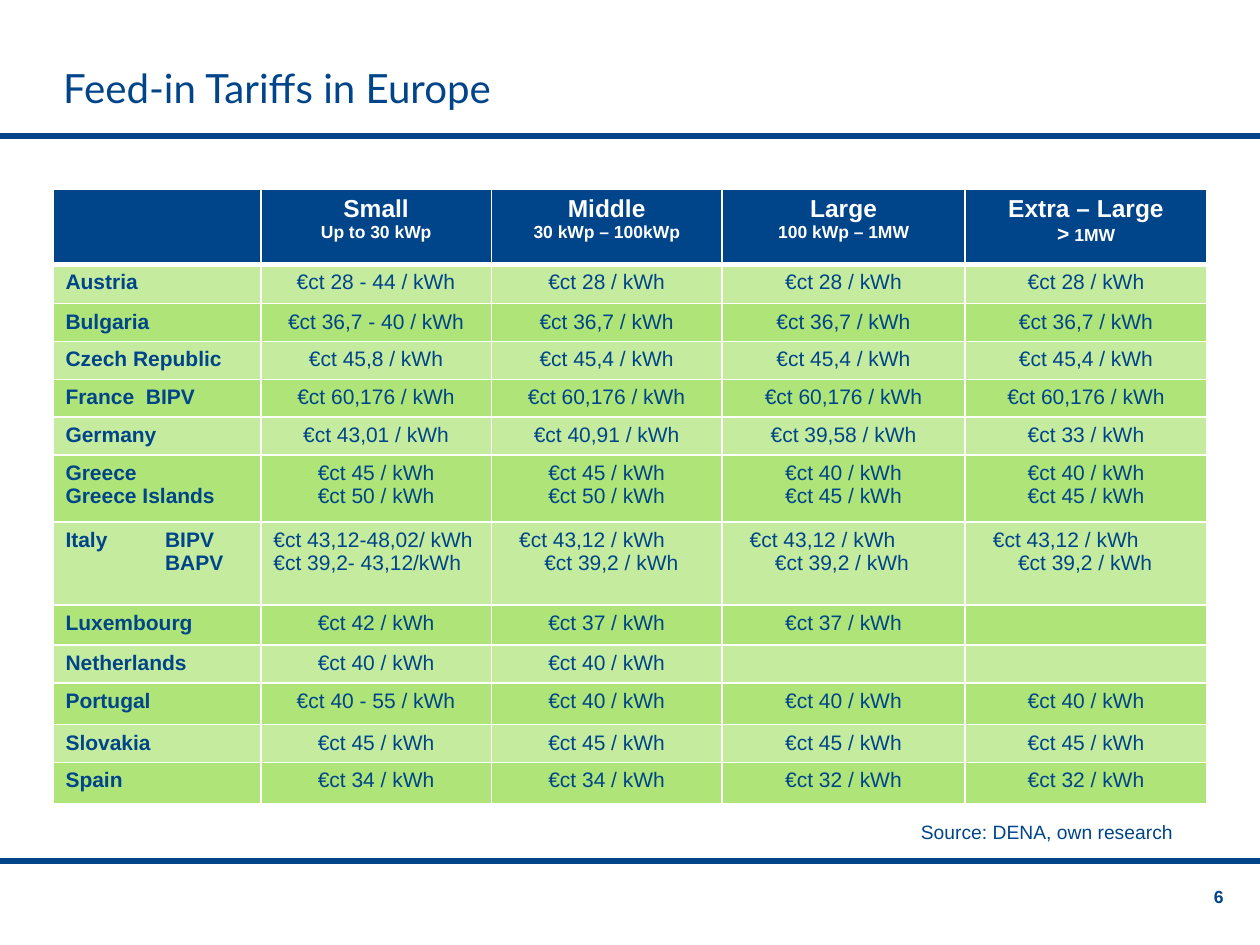
from lxml import etree
from pptx import Presentation
from pptx.dml.color import RGBColor
from pptx.enum.shapes import MSO_CONNECTOR
from pptx.enum.text import MSO_ANCHOR, PP_ALIGN
from pptx.oxml.ns import qn
from pptx.util import Inches, Pt

LEFT, CENTER, RIGHT = PP_ALIGN.LEFT, PP_ALIGN.CENTER, PP_ALIGN.RIGHT
TOP, MIDDLE = MSO_ANCHOR.TOP, MSO_ANCHOR.MIDDLE
STRAIGHT = MSO_CONNECTOR.STRAIGHT
COLORS = {"navy": "004489", "white": "FFFFFF", "light": "C5EC9E", "green": "AEE478"}
TITLE_ONLY = 5

COLUMN_WIDTHS = [1.65, 1.83, 1.83, 1.93, 1.92]
HEADER_HEIGHT = 0.6
SIZE_CLASSES = [
    ("Small", [("Up to 30 kWp", 10)]),
    ("Middle", [("30 kWp – 100kWp", 10)]),
    ("Large", [("100 kWp – 1MW", 10)]),
    ("Extra – Large", [(">", 12), (" 1MW", 10)]),
]
ITALY = "Italy\tBIPV\n\tBAPV"
ITALY_TAB = 0.79
ITALY_INDENTS = [0.12, 0.32]
# Row height, country, then cents per kWh for each size class
TARIFFS = [
    (0.31, "Austria", ["28 - 44", "28", "28", "28"]),
    (0.29, "Bulgaria", ["36,7 - 40", "36,7", "36,7", "36,7"]),
    (0.29, "Czech Republic", ["45,8", "45,4", "45,4", "45,4"]),
    (0.29, "France  BIPV", ["60,176"] * 4),
    (0.29, "Germany", ["43,01", "40,91", "39,58", "33"]),
    (0.53, "Greece\nGreece Islands", ["45\n50", "45\n50", "40\n45", "40\n45"]),
    (0.66, ITALY, ["€ct 43,12-48,02/ kWh\n€ct 39,2- 43,12/kWh"] + ["43,12\n39,2"] * 3),
    (0.32, "Luxembourg", ["42", "37", "37", ""]),
    (0.29, "Netherlands", ["40", "40", "", ""]),
    (0.33, "Portugal", ["40 - 55", "40", "40", "40"]),
    (0.3, "Slovakia", ["45"] * 4),
    (0.33, "Spain", ["34", "34", "32", "32"]),
]


def price_lines(cents):
    """Wrap each bare amount in its unit; complete prices stay as they are."""
    return [line if line.startswith("€") else f"€ct {line} / kWh"
            for line in cents.split("\n") if line]


class TariffSlide:
    def __init__(self, prs):
        self.slide = prs.slides.add_slide(prs.slide_layouts[TITLE_ONLY])
        self.body_font = "Arial"
        self.title_font = "Lato"

    @staticmethod
    def color(name):
        return RGBColor.from_string(COLORS[name])

    def style(self, font, size, color="navy", bold=False, name=None):
        font.name = name or self.body_font
        font.size = Pt(size)
        font.bold = bold
        font.color.rgb = self.color(color)

    def title(self, text, left, top, width, height):
        title = self.slide.shapes.title
        title.left, title.top = Inches(left), Inches(top)
        title.width, title.height = Inches(width), Inches(height)
        frame = title.text_frame
        frame.margin_left = frame.margin_right = frame.margin_top = frame.margin_bottom = 0
        frame.vertical_anchor = TOP
        frame.text = text
        frame.paragraphs[0].alignment = LEFT
        self.style(frame.paragraphs[0].font, 23, name=self.title_font)

    def rule(self, y):
        rule = self.slide.shapes.add_connector(
            STRAIGHT, 0, Inches(y), Inches(10), Inches(y))
        rule.line.color.rgb = self.color("navy")
        rule.line.width = Pt(3.5)
        etree.SubElement(rule._element.spPr, qn("a:effectLst"))

    def right_text(self, text, left, top, width, height, size, bold=False):
        box = self.slide.shapes.add_textbox(
            Inches(left), Inches(top), Inches(width), Inches(height))
        frame = box.text_frame
        frame.word_wrap = True
        frame.vertical_anchor = MIDDLE
        frame.text = text
        frame.paragraphs[0].alignment = RIGHT
        self.style(frame.paragraphs[0].font, size, bold=bold)

    def table(self, left, top, widths, heights):
        table = self.slide.shapes.add_table(
            len(heights), len(widths), Inches(left), Inches(top),
            Inches(sum(widths)), Inches(sum(heights))).table
        table.horz_banding = False
        for column, width in zip(table.columns, widths):
            column.width = Inches(width)
        for row, height in zip(table.rows, heights):
            row.height = Inches(height)
        return table

    def cell_box(self, cell, fill, top=1, bottom=1):
        """Give the cell white borders and a plain fill."""
        tc_pr = cell._tc.get_or_add_tcPr()
        for side, width in (("L", 1), ("R", 1), ("T", top), ("B", bottom)):
            border = etree.SubElement(tc_pr, qn(f"a:ln{side}"), w=str(Pt(width)))
            paint = etree.SubElement(border, qn("a:solidFill"))
            etree.SubElement(paint, qn("a:srgbClr"), val=COLORS["white"])
        cell.fill.solid()
        cell.fill.fore_color.rgb = self.color(fill)

    def header_cell(self, cell, name, limits):
        self.cell_box(cell, "navy", bottom=3)
        frame = cell.text_frame
        frame.text = name
        limit = frame.add_paragraph()
        for text, size in limits:
            run = limit.add_run()
            run.text = text
            run.font.size = Pt(size)
        for paragraph, size in zip(frame.paragraphs, (14, 10)):
            paragraph.alignment = CENTER
            self.style(paragraph.font, size, "white", bold=True)

    def body_cell(self, cell, lines, fill, top, align=CENTER, bold=False,
                  indents=None, tab=None):
        self.cell_box(cell, fill, top=top)
        frame = cell.text_frame
        frame.text = "\n".join(lines)
        for index, paragraph in enumerate(frame.paragraphs):
            paragraph.alignment = align
            p_pr = paragraph._p.get_or_add_pPr()
            if indents:
                p_pr.set("marL", str(Inches(indents[index])))
            if tab:
                stops = etree.SubElement(p_pr, qn("a:tabLst"))
                etree.SubElement(stops, qn("a:tab"), pos=str(Inches(tab)), algn="l")
            self.style(paragraph.font, 12, bold=bold)
            if not lines:
                paragraph._p.get_or_add_endParaRPr().set("sz", "1200")

    def tariff_table(self):
        heights = [HEADER_HEIGHT] + [height for height, _, _ in TARIFFS]
        table = self.table(0.42, 1.5, COLUMN_WIDTHS, heights)
        self.cell_box(table.cell(0, 0), "navy", bottom=3)
        for column, (name, limits) in enumerate(SIZE_CLASSES, 1):
            self.header_cell(table.cell(0, column), name, limits)
        for row, (_, country, prices) in enumerate(TARIFFS, 1):
            fill = "light" if row % 2 else "green"
            top = 3 if row == 1 else 1
            italy = country == ITALY
            self.body_cell(table.cell(row, 0), country.split("\n"), fill, top, LEFT,
                           bold=True, tab=ITALY_TAB if italy else None)
            for column, cents in enumerate(prices, 1):
                staggered = italy and column > 1
                self.body_cell(table.cell(row, column), price_lines(cents), fill, top,
                               LEFT if italy else CENTER,
                               indents=ITALY_INDENTS if staggered else None)


def main():
    prs = Presentation()
    prs.slide_width, prs.slide_height = Inches(10), Inches(7.5)
    page = TariffSlide(prs)
    for y in (1.08, 6.83):
        page.rule(y)
    page.right_text("6", 7.48, 6.98, 2.33, 0.27, 10, bold=True)
    page.title("Feed-in Tariffs in Europe", 0.5, 0.5, 6.58, 0.33)
    page.tariff_table()
    page.right_text("Source: DENA, own research", 6.21, 6.46, 3.2, 0.29, 11)
    prs.save("out.pptx")


if __name__ == "__main__":
    main()
